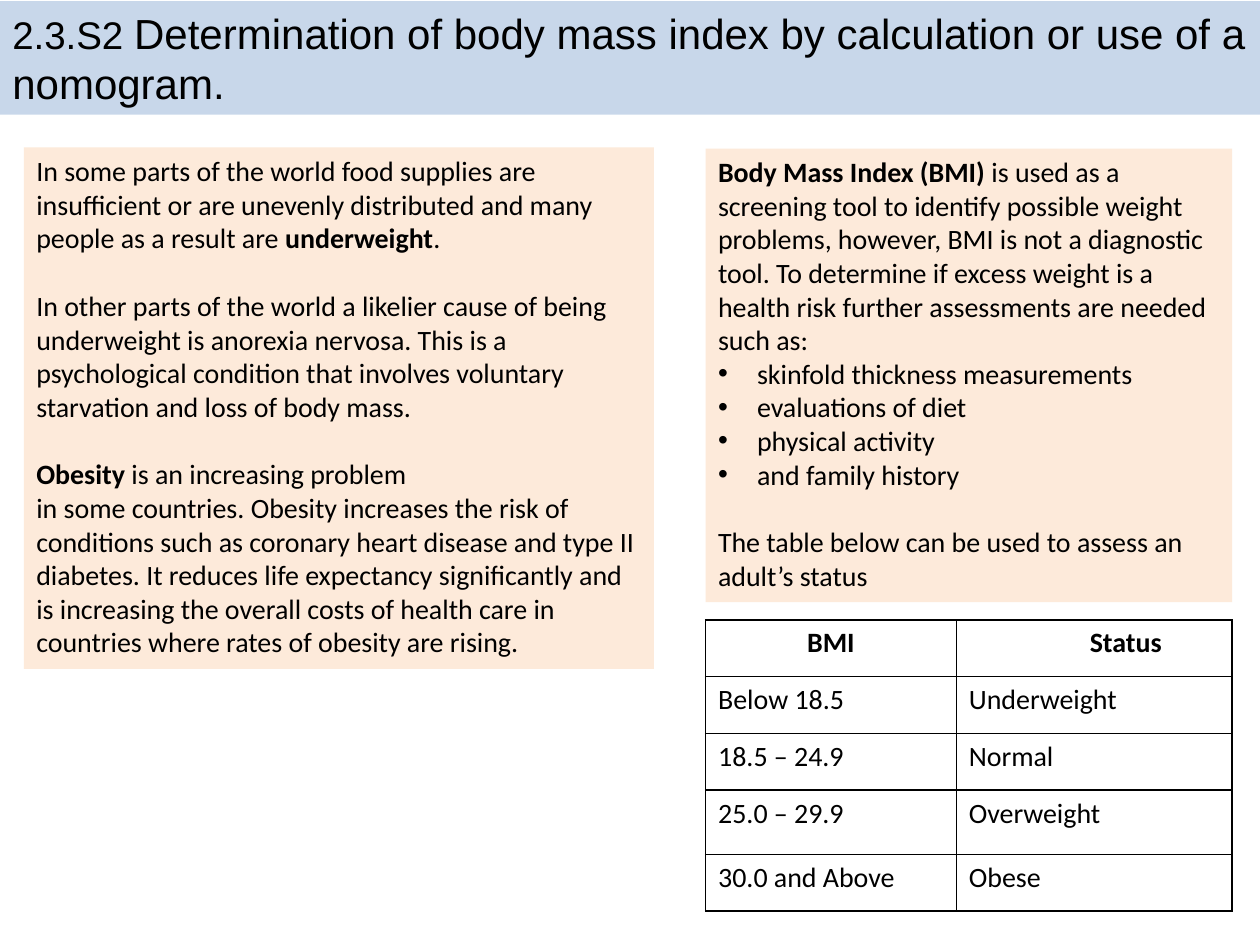
from dataclasses import dataclass
from lxml.etree import SubElement as Sub
from pptx import Presentation
from pptx.dml.color import RGBColor as Rgb
from pptx.enum.shapes import MSO_SHAPE as Shape
from pptx.enum.text import MSO_ANCHOR as Anchor, PP_ALIGN as Align
from pptx.oxml.ns import qn
from pptx.util import Inches, Pt


@dataclass(frozen=True)
class Theme:
    ink: Rgb = Rgb(0, 0, 0)
    white: Rgb = Rgb(255, 255, 255)
    blue: Rgb = Rgb(0xB9, 0xCD, 0xE5)
    peach: Rgb = Rgb(0xFD, 0xEA, 0xDA)
    head: str = "Arial"
    body: str = "Calibri"
    code: float = 22
    title: float = 24
    text: float = 16
    gap: float = 19.5
    line: float = 1


THEME = Theme()

TITLE = (
    ("2.3.S2 ", THEME.code),
    ("Determination of body mass index by calculation or use of a nomogram.", THEME.title),
)

CAUSES = (
    ("", ("In some parts of the world food supplies are insufficient or are unevenly "
          "distributed and many people as a result are ", "*underweight", ".")),
    ("gap", ("In other parts of the world a likelier cause of being underweight is "
             "anorexia nervosa. This is a psychological condition that involves "
             "voluntary starvation and loss of body mass.",)),
    ("gap", ("*Obesity ", "is an increasing problem")),
    ("", ("in some countries. Obesity increases the risk of conditions such as coronary "
          "heart disease and type II diabetes. It reduces life expectancy significantly "
          "and is increasing the overall costs of health care in countries where rates "
          "of obesity are rising.",)),
)

INDEX = (
    ("", ("*Body Mass Index (BMI) ",
          "is used as a screening tool to identify possible weight problems, however, "
          "BMI is not a diagnostic tool. To determine if excess weight is a health risk "
          "further assessments are needed such as:")),
    ("dot", ("skinfold thickness measurements",)),
    ("dot", ("evaluations of diet",)),
    ("dot", ("physical activity",)),
    ("dot", ("and family history",)),
    ("gap", ("The table below can be used to assess an adult’s status",)),
)

ROWS = (
    ("BMI", "Status"),
    ("Below 18.5", "Underweight"),
    ("18.5 – 24.9", "Normal"),
    ("25.0 – 29.9", "Overweight"),
    ("30.0 and Above", "Obese"),
)


def style(run, size=THEME.text, name=THEME.body, bold=False):
    font = run.font
    font.size, font.name, font.bold = Pt(size), name, bold
    font.color.rgb = THEME.ink


def add_box(slide, area, fill, anchor):
    box = slide.shapes.add_shape(Shape.RECTANGLE, *map(Inches, area))
    box.shadow.inherit = False
    box.fill.solid()
    box.fill.fore_color.rgb = fill
    box.line.fill.background()
    box.text_frame.word_wrap = True
    box.text_frame.vertical_anchor = anchor
    return box


def add_title(slide):
    bar = add_box(slide, (0, 0.01, 10, 0.9), THEME.blue, Anchor.MIDDLE)
    tint = bar.fill._xPr.find(qn("a:solidFill"))[0]
    Sub(tint, qn("a:alpha"), val="78000")
    para = bar.text_frame.paragraphs[0]
    para.alignment = Align.LEFT
    for text, size in TITLE:
        run = para.add_run()
        run.text = text
        style(run, size, THEME.head)


def add_dot(para):
    props = para._p.get_or_add_pPr()
    props.set("marL", str(Inches(0.31)))
    props.set("indent", str(-Inches(0.31)))
    Sub(props, qn("a:buFont"), typeface="Arial")
    Sub(props, qn("a:buChar"), char="•")


def add_panel(slide, area, paras):
    frame = add_box(slide, area, THEME.peach, Anchor.TOP).text_frame
    for i, (kind, parts) in enumerate(paras):
        para = frame.add_paragraph() if i else frame.paragraphs[0]
        para.alignment = Align.LEFT
        if kind == "gap":
            para.space_before = Pt(THEME.gap)
        elif kind == "dot":
            add_dot(para)
        for part in parts:
            run = para.add_run()
            run.text = part.lstrip("*")
            style(run, bold=part.startswith("*"))


def add_edges(cell):
    props = cell._tc.get_or_add_tcPr()
    for side in ("lnL", "lnR", "lnT", "lnB"):
        line = Sub(props, qn(f"a:{side}"), w=str(Pt(THEME.line)))
        fill = Sub(line, qn("a:solidFill"))
        Sub(fill, qn("a:srgbClr"), val=str(THEME.ink))


def add_grid(slide):
    area = map(Inches, (5.6, 4.92, 4.18, 2.31))
    table = slide.shapes.add_table(len(ROWS), len(ROWS[0]), *area).table
    table.first_row = table.horz_banding = False
    for col, wide in zip(table.columns, (1.99, 2.19)):
        col.width = Inches(wide)
    for row, tall in zip(table.rows, (0.45, 0.45, 0.45, 0.51, 0.45)):
        row.height = Inches(tall)
    for r, texts in enumerate(ROWS):
        for c, text in enumerate(texts):
            cell = table.cell(r, c)
            add_edges(cell)
            cell.fill.solid()
            cell.fill.fore_color.rgb = THEME.white
            cell.text_frame.text = text
            para = cell.text_frame.paragraphs[0]
            para.alignment = Align.LEFT if r else Align.CENTER
            style(para.runs[0], bold=r == 0)
    table.cell(0, 1).margin_left = Inches(0.6)


def main():
    deck = Presentation()
    deck.slide_width, deck.slide_height = Inches(10), Inches(7.5)
    slide = deck.slides.add_slide(deck.slide_layouts[6])
    add_title(slide)
    add_panel(slide, (5.6, 1.18, 4.18, 3.6), INDEX)
    add_grid(slide)
    add_panel(slide, (0.19, 1.17, 5, 4.14), CAUSES)
    deck.save("out.pptx")


if __name__ == "__main__":
    main()
